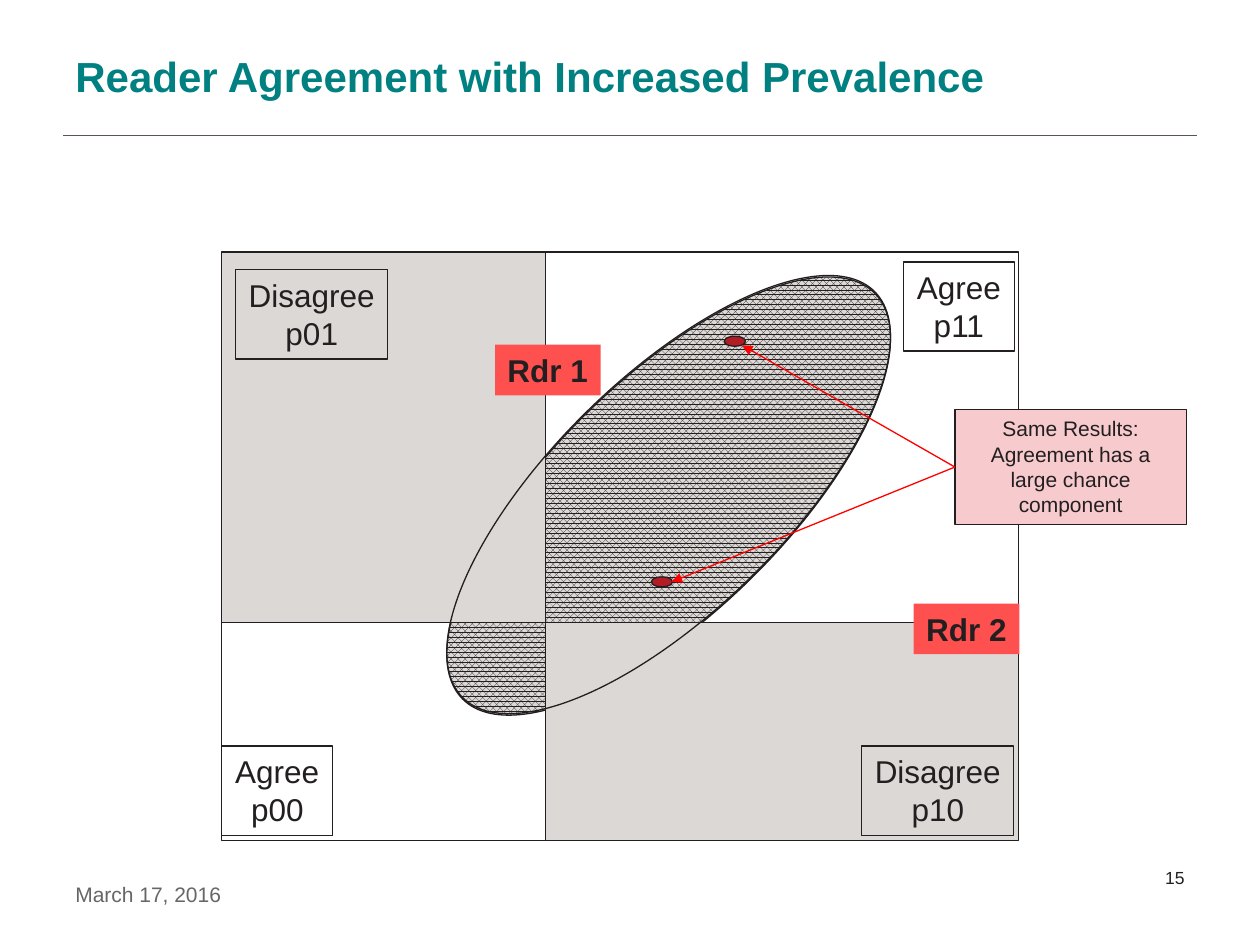
from dataclasses import dataclass
from typing import Optional

from lxml import etree
from pptx import Presentation
from pptx.dml.color import RGBColor
from pptx.enum.dml import MSO_PATTERN
from pptx.enum.shapes import MSO_CONNECTOR, MSO_SHAPE
from pptx.enum.text import MSO_ANCHOR as Anchor, MSO_AUTO_SIZE as AutoSize, PP_ALIGN as Align
from pptx.oxml.ns import qn
from pptx.util import Cm, Pt

INK, GREY, RED, CORAL = "231F20", "DCD8D6", "FF0000", "FF5050"
DOT_FILL, PINK, TEAL = "B31C27", "F7CBCE", "008080"

# Grid of the four quadrants
LEFT, MIDDLE, RIGHT = 4.47, 11.0, 20.53
TOP, CENTRE, BOTTOM = 5.08, 12.55, 16.94


@dataclass
class Area:
    """Position and size in centimetres."""
    left: float
    top: float
    width: float
    height: float

    def lengths(self) -> tuple:
        return Cm(self.left), Cm(self.top), Cm(self.width), Cm(self.height)


@dataclass
class Style:
    size: float
    color: str = INK
    bold: bool = False
    align: Align = Align.LEFT
    anchor: Anchor = Anchor.TOP
    wrap: bool = True
    grow: bool = False


@dataclass
class Marker:
    dot: Area
    tip: tuple[float, float]


def rgb(color: str) -> RGBColor:
    return RGBColor.from_string(color)


def write(box, text: str, style: Style) -> None:
    """Write one paragraph per line of text."""
    frame = box.text_frame
    frame.text = text
    frame.word_wrap = style.wrap
    frame.vertical_anchor = style.anchor
    frame.auto_size = AutoSize.SHAPE_TO_FIT_TEXT if style.grow else AutoSize.NONE
    for para in frame.paragraphs:
        para.alignment = style.align
        para.font.name = "Arial"
        para.font.size = Pt(style.size)
        para.font.bold = style.bold
        para.font.color.rgb = rgb(style.color)


def add_text(page, area: Area, text: str, style: Style) -> None:
    write(page.shapes.add_textbox(*area.lengths()), text, style)


def add_box(page, area: Area, fill: Optional[str] = None, line: Optional[str] = INK,
            kind: MSO_SHAPE = MSO_SHAPE.RECTANGLE):
    box = page.shapes.add_shape(kind, *area.lengths())
    box.shadow.inherit = False
    if fill:
        box.fill.solid()
        box.fill.fore_color.rgb = rgb(fill)
    else:
        box.fill.background()
    if line:
        box.line.color.rgb = rgb(line)
        box.line.width = Pt(0.75)
    else:
        box.line.fill.background()
    return box


def add_line(page, start: tuple, end: tuple, color: str = INK, width: float = 0.75):
    points = [Cm(value) for value in (*start, *end)]
    line = page.shapes.add_connector(MSO_CONNECTOR.STRAIGHT, *points)
    line.line.color.rgb = rgb(color)
    line.line.width = Pt(width)
    etree.SubElement(line._element.spPr, qn("a:effectLst"))
    return line


def add_ellipse(page, area: Area, patterned: bool) -> None:
    ellipse = add_box(page, area, kind=MSO_SHAPE.OVAL)
    ellipse.rotation = 315.5
    if patterned:
        ellipse.fill.patterned()
        ellipse.fill.pattern = MSO_PATTERN.PERCENT_75
        ellipse.fill.fore_color.rgb = rgb(INK)
        ellipse.fill.back_color.rgb = rgb(GREY)


def add_quadrant(page, x1: float, y1: float, x2: float, y2: float,
                 fill: Optional[str] = None) -> None:
    add_box(page, Area(x1, y1, x2 - x1, y2 - y1), fill)


def add_arrow(page, callout, area: Area, tip: tuple) -> None:
    """Point from the left side of the callout to a marker."""
    arrow = add_line(page, (area.left, area.top + area.height / 2), tip, RED)
    arrow.begin_connect(callout, 1)
    outline = arrow.line._get_or_add_ln()
    etree.SubElement(outline, qn("a:tailEnd"), type="triangle")


def main() -> None:
    deck = Presentation()
    deck.slide_width, deck.slide_height = Cm(25.4), Cm(19.05)
    page = deck.slides.add_slide(deck.slide_layouts[6])

    # Title, rule and footer
    add_line(page, (1.27, 2.72), (24.13, 2.72), "5E5356", 0.25)
    add_text(page, Area(1.27, 17.65, 7.42, 0.76), "March 17, 2016",
             Style(12, "666666", grow=True))
    add_text(page, Area(18.85, 17.35, 5.28, 1.27), "15", Style(10, align=Align.RIGHT))
    add_text(page, Area(1.27, 0.76, 18.85, 1.55), "Reader Agreement with Increased Prevalence",
             Style(24, TEAL, bold=True, anchor=Anchor.MIDDLE))

    # Axes, quadrants and ellipse: grey quadrants hide part of the pattern
    add_line(page, (MIDDLE, 6.73), (MIDDLE, BOTTOM))
    add_line(page, (LEFT, CENTRE), (20.17, CENTRE))
    add_ellipse(page, Area(7.65, 7.65, 11.66, 4.7), patterned=True)
    add_quadrant(page, LEFT, TOP, MIDDLE, CENTRE, GREY)
    add_quadrant(page, LEFT, CENTRE, MIDDLE, BOTTOM)
    add_quadrant(page, MIDDLE, CENTRE, RIGHT, BOTTOM, GREY)
    add_ellipse(page, Area(7.65, 7.62, 11.66, 4.7), patterned=False)
    add_quadrant(page, MIDDLE, TOP, RIGHT, CENTRE)

    # Quadrant labels
    label_style = Style(18, align=Align.CENTER, wrap=False, grow=True)
    for text, left, top, width in (
        ("Disagree\np01", 4.75, 5.44, 3.07),
        ("Disagree\np10", 17.37, 15.04, 3.07),
        ("Agree\np11", 18.21, 5.28, 2.24),
        ("Agree\np00", LEFT, 15.04, 2.24),
    ):
        write(add_box(page, Area(left, top, width, 1.8)), text, label_style)

    # Reader tags
    tag_style = Style(18, bold=True, wrap=False, grow=True)
    for text, left, top in (("Rdr 1", 9.98, 6.95), ("Rdr 2", 18.42, 12.17)):
        write(add_box(page, Area(left, top, 2.13, 1.02), CORAL, line=None), text, tag_style)

    # Callout with arrows to the two markers
    callout_area = Area(19.25, 8.26, 4.67, 2.31)
    callout = add_box(page, callout_area, PINK)
    write(callout, "Same Results: Agreement has a large chance component",
          Style(12, align=Align.CENTER, grow=True))
    for marker in (
        Marker(Area(14.6, 6.78, 0.43, 0.2), (14.96, 6.96)),
        Marker(Area(13.13, 11.63, 0.43, 0.2), (13.54, 11.73)),
    ):
        add_box(page, marker.dot, DOT_FILL, kind=MSO_SHAPE.OVAL)
        add_arrow(page, callout, callout_area, marker.tip)

    deck.save("out.pptx")


if __name__ == "__main__":
    main()
